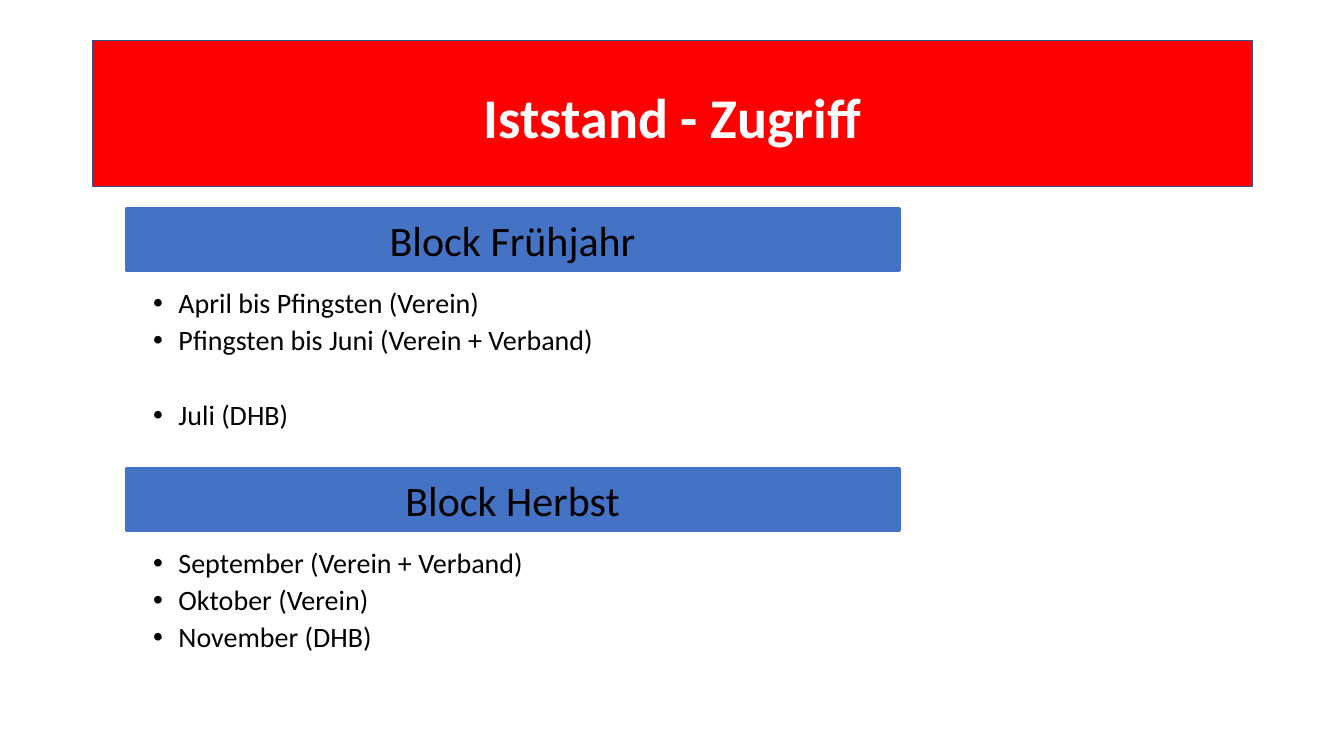
from lxml.etree import SubElement
from pptx import Presentation
from pptx.dml.color import RGBColor
from pptx.enum.shapes import MSO_SHAPE
from pptx.enum.text import MSO_ANCHOR, PP_ALIGN
from pptx.oxml.ns import qn
from pptx.util import Inches, Pt

HUES = {"red": "FF0000", "navy": "325491", "blue": "4472C4",
        "white": "FFFFFF", "black": "000000"}
BLOCKS = [
    ("Block Frühjahr", [("April bis Pfingsten (Verein)", 5),
                        ("Pfingsten bis Juni (Verein + Verband)", 5),
                        ("Juli (DHB)", 32)]),
    ("Block Herbst", [("September (Verein + Verband)", 5),
                      ("Oktober (Verein)", 5),
                      ("November (DHB)", 5)]),
]


def hue(name):
    """Return the named colour."""
    return RGBColor.from_string(HUES[name])


def style(para, size, color, bold=False):
    """Set the font of a paragraph."""
    font = para.font
    font.name, font.size, font.bold = "Calibri", Pt(size), bold
    font.color.rgb = hue(color)


def banner(slide, box, text, size, fill, line, width, color, bold=False):
    """Draw a filled bar with centred text and return its paragraph."""
    bar = slide.shapes.add_shape(MSO_SHAPE.RECTANGLE, *map(Inches, box))
    bar.shadow.inherit = False
    bar.fill.solid()
    bar.fill.fore_color.rgb = hue(fill)
    bar.line.color.rgb = hue(line)
    bar.line.width = Pt(width)
    bar.text_frame.word_wrap = True
    bar.text_frame.vertical_anchor = MSO_ANCHOR.MIDDLE
    para = bar.text_frame.paragraphs[0]
    para.text, para.alignment = text, PP_ALIGN.CENTER
    style(para, size, color, bold)
    return para


def bullets(slide, box, items):
    """Write a bulleted list of (text, space before) items in a box."""
    frame = slide.shapes.add_textbox(*map(Inches, box)).text_frame
    frame.word_wrap = True
    frame.margin_left = frame.margin_top = 0
    frame.margin_right = frame.margin_bottom = 0
    for i, (text, gap) in enumerate(items):
        para = frame.add_paragraph() if i else frame.paragraphs[0]
        para.text, para.line_spacing = text, 0.9
        para.space_before = Pt(gap if i else 0)
        style(para, 20, "black")
        props = para._p.get_or_add_pPr()
        props.set("marL", str(Inches(0.25)))
        props.set("indent", str(-Inches(0.25)))
        SubElement(props, qn("a:buFont")).set("typeface", "Arial")
        SubElement(props, qn("a:buChar")).set("char", "•")
        props.append(props.find(qn("a:defRPr")))


def block(slide, box, title, items):
    """Place a header bar with its list below in a box."""
    left, top, width, height = box
    banner(slide, (left, top, width, 0.61), title, 30,
           "blue", "blue", 2, "black")
    bullets(slide, (left + 0.27, top + 0.8, width - 0.27, height - 0.8), items)


def main():
    """Build and save the slide."""
    deck = Presentation()
    deck.slide_width, deck.slide_height = Inches(13.33), Inches(7.5)
    slide = deck.slides.add_slide(deck.slide_layouts[6])
    head = banner(slide, (0.92, 0.4, 11.5, 1.45), "Iststand - Zugriff", 40,
                  "red", "navy", 1, "white", True)
    head.line_spacing = 1.07
    for i, (title, items) in enumerate(BLOCKS):
        block(slide, (1.25, 2.07 + i * 2.58, 7.67, 2.3), title, items)
    deck.save("out.pptx")


if __name__ == "__main__":
    main()
